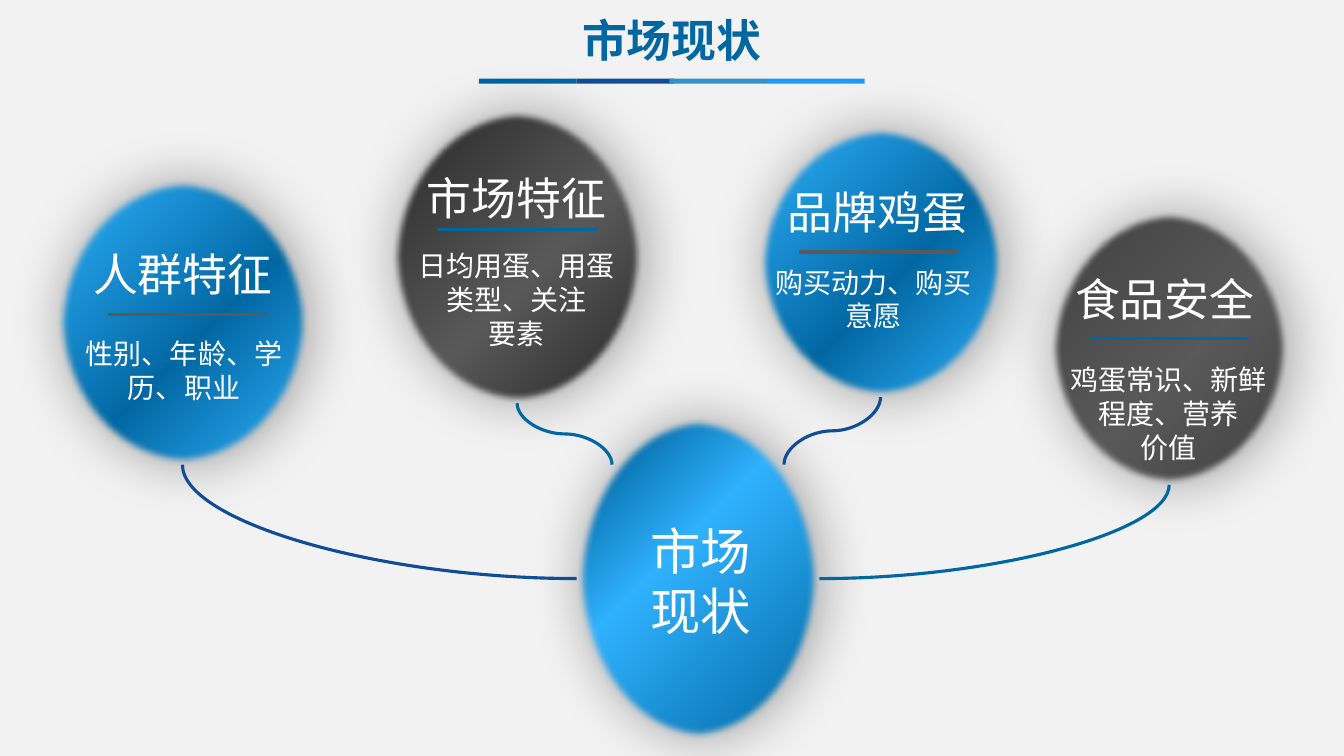
from dataclasses import dataclass
from lxml.etree import SubElement
from pptx import Presentation
from pptx.dml.color import RGBColor
from pptx.enum.shapes import MSO_CONNECTOR as Link, MSO_SHAPE as Preset
from pptx.enum.text import MSO_AUTO_SIZE as AutoSize, PP_ALIGN as Align
from pptx.oxml import parse_xml
from pptx.oxml.ns import nsdecls, qn
from pptx.util import Pt

FONT = "Noto Sans CJK SC"
WHITE, GRAY, BLUE, NAVY = "FFFFFF", "595959", "0167A2", "0F4D96"
SKY, OUTLINE = "30B2FE", "014C78"
BLUE_STOPS = [(0, SKY), (44, BLUE), (100, SKY)]
CENTER_STOPS = [(10, BLUE), (41, SKY), (100, BLUE)]
CENTER_BOX = (411.8, 298.1, 173.5, 230.4)
TEXT_WIDTH, RULE_LENGTH = 157.7, 113.6


@dataclass
class Topic:
    heading: str
    lines: list
    oval: tuple
    stops: list
    heading_at: tuple
    body_at: tuple
    rule_at: tuple
    rule_color: str
    curve_end: tuple
    curve_color: str
    curve_kind: str


TOPICS = [
    Topic("食品安全", ["鸡蛋常识、新鲜程度、营养", "价值"],
          (750.2, 151.2, 169.9, 195.1),
          [(0, "404040"), (44, GRAY), (100, "404040")],
          (753.1, 190.8), (756, 255.6), (778.3, 241.9), BLUE,
          (585.3, 413.3), BLUE, "curvedConnector2"),
    Topic("人群特征", ["性别、年龄、学历、职业"],
          (41, 128.2, 178.6, 203.8), BLUE_STOPS,
          (51.8, 172.8), (52.6, 236.9), (77, 224.6), GRAY,
          (411.8, 413.3), NAVY, "curvedConnector2"),
    Topic("品牌鸡蛋", ["购买动力、购买", "意愿"],
          (542.2, 90.7, 173.5, 193), BLUE_STOPS,
          (547.9, 128.2), (545, 185.8), (571, 180), GRAY,
          (560, 331.9), NAVY, "curvedConnector3"),
    Topic("市场特征", ["日均用蛋、用蛋类型、关注", "要素"],
          (280.1, 78.5, 178.6, 209.5),
          [(0, "262626"), (44, GRAY), (100, "262626")],
          (290.2, 118.1), (290.2, 174.2), (312.5, 164.2), BLUE,
          (437.2, 331.9), BLUE, "curvedConnector3"),
]


def color(value):
    return RGBColor.from_string(value)


def points(values):
    return [Pt(value) for value in values]


def add_text(page, lines, box, size, bold=False, grow=True):
    frame = page.shapes.add_textbox(*points(box)).text_frame
    frame.word_wrap = True
    frame.auto_size = AutoSize.SHAPE_TO_FIT_TEXT if grow else AutoSize.NONE
    for index, line in enumerate(lines):
        para = frame.add_paragraph() if index else frame.paragraphs[0]
        para.alignment = Align.CENTER
        span = para.add_run()
        span.text = line
        font = span.font
        font.size, font.bold, font.name = Pt(size), bold, FONT
        font.color.rgb = color(WHITE if grow else BLUE)
        SubElement(font._element, qn("a:ea")).set("typeface", FONT)


def add_bar(page, box, fill):
    bar = page.shapes.add_shape(Preset.RECTANGLE, *points(box))
    bar.shadow.inherit = False
    bar.fill.solid()
    bar.fill.fore_color.rgb = color(fill)
    bar.line.fill.background()


def add_oval(page, box, stops, focus, outlined=True):
    oval = page.shapes.add_shape(Preset.OVAL, *points(box))
    oval.shadow.inherit = False
    if outlined:
        oval.line.color.rgb = color(OUTLINE)
        oval.line.width = Pt(1)
    else:
        oval.line.fill.background()
    marks = "".join(
        f'<a:gs pos="{place * 1000}"><a:srgbClr val="{tone}"/></a:gs>'
        for place, tone in stops)
    properties = oval._element.spPr
    properties.find(qn("a:prstGeom")).addnext(parse_xml(
        f'<a:gradFill {nsdecls("a")} rotWithShape="1"><a:gsLst>{marks}</a:gsLst>'
        f'<a:path path="circle"><a:fillToRect {focus}/></a:path></a:gradFill>'))
    effects = properties.find(qn("a:effectLst"))
    effects.append(parse_xml(
        f'<a:outerShdw {nsdecls("a")} blurRad="{Pt(43)}" dist="{Pt(3)}" '
        f'dir="{359 * 60000}" algn="ctr" rotWithShape="0">'
        '<a:srgbClr val="000000"><a:alpha val="40000"/></a:srgbClr></a:outerShdw>'))
    effects.append(parse_xml(f'<a:softEdge {nsdecls("a")} rad="{Pt(5)}"/>'))


def add_line(page, start, end, tone, kind=Link.STRAIGHT):
    line = page.shapes.add_connector(kind, *points(start + end))
    line.line.color.rgb = color(tone)
    line.line.width = Pt(2.25)
    SubElement(line._element.spPr, qn("a:effectLst"))
    return line


def add_curve(page, start, end, tone, preset):
    (x1, y1), (x2, y2) = start, end
    middle_x, middle_y = (x1 + x2) / 2, (y1 + y2) / 2
    half_width, half_height = (y2 - y1) / 2, abs(x2 - x1) / 2
    side = 1 if x2 > x1 else -1
    curve = add_line(
        page,
        (middle_x + side * half_width, middle_y - half_height),
        (middle_x - side * half_width, middle_y + half_height),
        tone, Link.CURVE)
    properties = curve._element.spPr
    properties.find(qn("a:xfrm")).set("rot", str((270 if side > 0 else 90) * 60000))
    properties.find(qn("a:prstGeom")).set("prst", preset)


def add_topic_details(page, topic):
    left, top, width, height = topic.oval
    add_curve(page, (left + width / 2, top + height), topic.curve_end,
              topic.curve_color, topic.curve_kind)
    add_text(page, [topic.heading], topic.heading_at + (TEXT_WIDTH, 46), 32)
    body_height = 55.4 if topic.heading in ("人群特征", "品牌鸡蛋") else 79.9
    add_text(page, topic.lines, topic.body_at + (TEXT_WIDTH, body_height), 20)
    x, y = topic.rule_at
    add_line(page, (x, y), (x + RULE_LENGTH, y), topic.rule_color)


def main():
    deck = Presentation()
    deck.slide_width, deck.slide_height = Pt(960), Pt(540)
    page = deck.slides.add_slide(deck.slide_layouts[6])
    page.background.fill.solid()
    page.background.fill.fore_color.rgb = color("F2F2F2")

    add_text(page, ["市场现状"], (258.5, 5.8, 442.8, 49.7), 32, bold=True, grow=False)
    bars = [(342, BLUE), (411.8, NAVY), (478.1, "3491CA"), (547.9, "1B9AF9")]
    for left, fill in bars:
        add_bar(page, (left, 56.2, 69.8, 3.6), fill)

    for index, topic in enumerate(TOPICS):
        if index == 2:
            add_oval(page, CENTER_BOX, CENTER_STOPS, 'r="100000" b="100000"', outlined=False)
        add_oval(page, topic.oval, topic.stops, 'l="100000" t="100000"')
    for topic in TOPICS:
        add_topic_details(page, topic)
    add_text(page, ["市场", "现状"], (433.4, 367.9, 133.9, 94.3), 36)
    deck.save("out.pptx")


if __name__ == "__main__":
    main()
